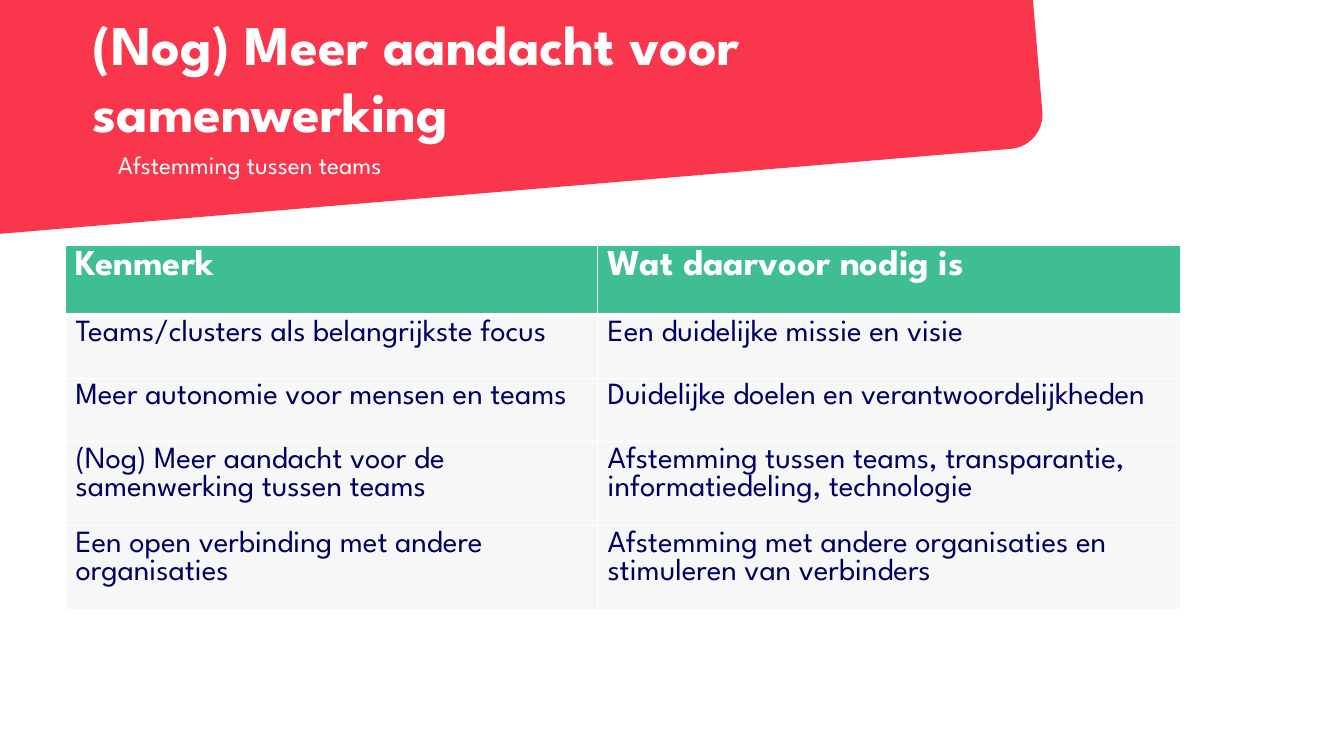
from lxml.etree import SubElement
from pptx import Presentation
from pptx.dml.color import RGBColor
from pptx.enum.shapes import MSO_SHAPE
from pptx.oxml.ns import qn
from pptx.util import Cm, Pt

COLORS = {"red": "F9364C", "green": "3FBD93", "navy": "000064",
          "pale": "F7F7F8", "white": "FFFFFF"}


def write(frame, text, size, color="white", bold=False, spacing=None):
    paragraph = frame.paragraphs[0]
    paragraph.line_spacing = spacing
    run = paragraph.add_run()
    run.text = text
    run.font.name = "League Spartan"
    run.font.size = Pt(size)
    run.font.bold = bold
    run.font.color.rgb = RGBColor.from_string(COLORS[color])
    return paragraph


def add_frame(left, top, width, height):
    frame = slide.shapes.add_textbox(Cm(left), Cm(top), Cm(width), Cm(height)).text_frame
    frame.word_wrap = True
    frame.margin_left = frame.margin_right = frame.margin_top = frame.margin_bottom = 0
    return frame


prs = Presentation()
prs.slide_width = Cm(33.87)
prs.slide_height = Cm(19.05)
slide = prs.slides.add_slide(prs.slide_layouts[6])

banner = slide.shapes.add_shape(MSO_SHAPE.ROUNDED_RECTANGLE,
                                Cm(-2.54), Cm(-2.33), Cm(28.63), Cm(7.22))
banner.adjustments[0] = 0.12
banner.rotation = 355.2
banner.shadow.inherit = False
banner.fill.solid()
banner.fill.fore_color.rgb = RGBColor.from_string(COLORS["red"])
banner.line.fill.background()

title = add_frame(2.34, 0.23, 23.29, 2.01)
write(title, "(Nog) Meer aandacht voor samenwerking", 40, bold=True)

subtitle = add_frame(2.34, 3.84, 29.21, 2.01)
indent = write(subtitle, "Afstemming tussen teams", 18, spacing=0.9)._p.get_or_add_pPr()
indent.set("marL", str(Cm(1.27)))
indent.set("indent", str(Cm(-0.64)))

rows = [
    ("Kenmerk", "Wat daarvoor nodig is"),
    ("Teams/clusters als belangrijkste focus", "Een duidelijke missie en visie"),
    ("Meer autonomie voor mensen en teams", "Duidelijke doelen en verantwoordelijkheden"),
    ("(Nog) Meer aandacht voor de samenwerking tussen teams",
     "Afstemming tussen teams, transparantie, informatiedeling, technologie"),
    ("Een open verbinding met andere organisaties",
     "Afstemming met andere organisaties en stimuleren van verbinders"),
]
features = slide.shapes.add_table(len(rows), 2, Cm(1.65), Cm(6.18), Cm(28.11), Cm(8.15)).table
for column, width in zip(features.columns, (13.41, 14.7)):
    column.width = Cm(width)

for r, row in enumerate(rows):
    header = r == 0
    features.rows[r].height = Cm(1.75 if header else 1.6)
    for c, text in enumerate(row):
        cell = features.cell(r, c)
        write(cell.text_frame, text, 26 if header else 22,
              color="white" if header else "navy", bold=header)
        properties = cell._tc.get_or_add_tcPr()
        for side in ("L", "R", "T", "B"):
            thick = (r, side) in ((0, "B"), (1, "T"))
            border = SubElement(properties, qn(f"a:ln{side}"), w=str(Pt(3 if thick else 1)))
            fill = SubElement(border, qn("a:solidFill"))
            SubElement(fill, qn("a:srgbClr"), val=COLORS["white"])
        cell.fill.solid()
        cell.fill.fore_color.rgb = RGBColor.from_string(COLORS["green" if header else "pale"])

prs.save("out.pptx")
